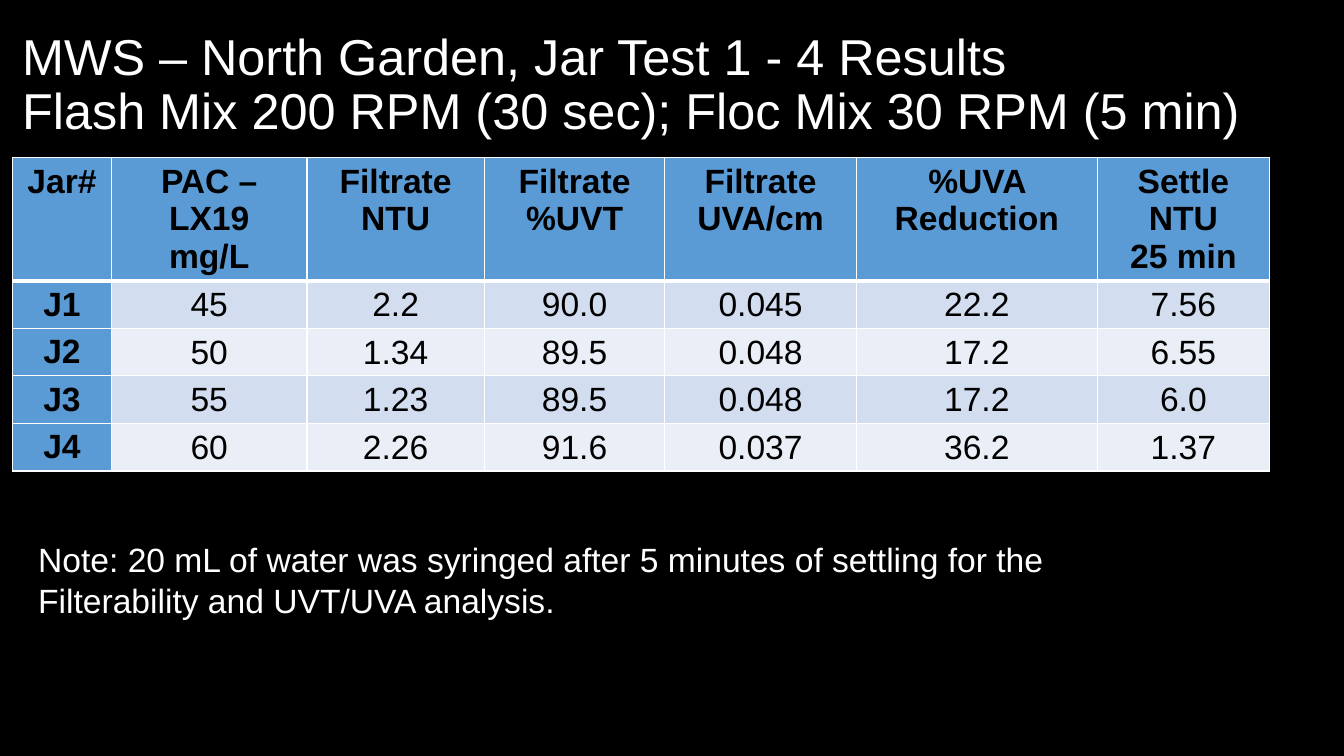
from copy import deepcopy

from lxml import etree
from pptx import Presentation
from pptx.dml.color import RGBColor
from pptx.enum.text import MSO_ANCHOR, MSO_AUTO_SIZE, PP_ALIGN
from pptx.oxml.ns import qn
from pptx.util import Pt

LEFT, CENTER = PP_ALIGN.LEFT, PP_ALIGN.CENTER
TOP, MIDDLE = MSO_ANCHOR.TOP, MSO_ANCHOR.MIDDLE
NO_FIT, GROW = MSO_AUTO_SIZE.NONE, MSO_AUTO_SIZE.SHAPE_TO_FIT_TEXT

COLORS = {
    "background": "000000",
    "light": "FFFFFF",
    "dark": "000000",
    "header": "5B9BD5",
    "odd": "D2DEEF",
    "even": "EAEFF7",
}
FONT = "Arial"
TITLE = ("MWS – North Garden, Jar Test 1 - 4 Results\v"
         "Flash Mix 200 RPM (30 sec); Floc Mix 30 RPM (5 min)")
HEADINGS = ["Jar#", "PAC – LX19\nmg/L", "Filtrate\nNTU", "Filtrate\n%UVT",
            "Filtrate\nUVA/cm", "%UVA Reduction", "Settle\nNTU\n25 min"]
JARS = [
    ["J1", "45", "2.2", "90.0", "0.045", "22.2", "7.56"],
    ["J2", "50", "1.34", "89.5", "0.048", "17.2", "6.55"],
    ["J3", "55", "1.23", "89.5", "0.048", "17.2", "6.0"],
    ["J4", "60", "2.26", "91.6", "0.037", "36.2", "1.37"],
]
NOTE = ("Note: 20 mL of water was syringed after 5 minutes of settling for the\n"
        "Filterability and UVT/UVA analysis.")
COLUMN_WIDTHS = [70.6, 139.7, 126.7, 128.9, 136.8, 172.1, 123.1]
HEADER_HEIGHT, JAR_HEIGHT = 87.8, 33.9


def rgb(name):
    return RGBColor.from_string(COLORS[name])


def write(frame, text, size=24, color="dark", bold=False, align=LEFT, spacing=None):
    """Newlines start paragraphs; vertical tabs break lines."""
    frame.text = text
    for paragraph in frame.paragraphs:
        paragraph.alignment = align
        if spacing:
            paragraph.line_spacing = spacing
        for run in paragraph.runs:
            run.font.name, run.font.size, run.font.bold = FONT, Pt(size), bold
            run.font.color.rgb = rgb(color)
        # Line breaks take the height of the text around them
        for line_break in paragraph._p.findall(qn("a:br")):
            line_break.insert(0, deepcopy(paragraph.runs[0].font._element))


def set_borders(cell, **widths):
    properties = cell._tc.get_or_add_tcPr()
    for index, side in enumerate("LRTB"):
        line = etree.Element(qn(f"a:ln{side}"), w=str(Pt(widths.get(side, 1))))
        fill = etree.SubElement(line, qn("a:solidFill"))
        etree.SubElement(fill, qn("a:srgbClr"), val=COLORS["light"])
        properties.insert(index, line)


def place_title(slide, left, top, width, height):
    title = slide.shapes.title
    title.left, title.top, title.width, title.height = map(Pt, (left, top, width, height))
    frame = title.text_frame
    frame.word_wrap, frame.auto_size, frame.vertical_anchor = True, NO_FIT, MIDDLE
    write(frame, TITLE, size=36, color="light", spacing=0.9)


def place_results(slide, left, top):
    rows = [HEADINGS] + JARS
    height = HEADER_HEIGHT + JAR_HEIGHT * len(JARS)
    results = slide.shapes.add_table(len(rows), len(HEADINGS), Pt(left), Pt(top),
                                     Pt(sum(COLUMN_WIDTHS)), Pt(height)).table
    for column, width in zip(results.columns, COLUMN_WIDTHS):
        column.width = Pt(width)
    for r, values in enumerate(rows):
        results.rows[r].height = Pt(JAR_HEIGHT if r else HEADER_HEIGHT)
        for c, value in enumerate(values):
            cell = results.cell(r, c)
            heading = r == 0 or c == 0
            write(cell.text_frame, value, bold=heading, align=CENTER)
            cell.vertical_anchor = TOP if heading else MIDDLE
            if not heading:
                cell.margin_left = cell.margin_right = cell.margin_top = Pt(0.7)
                cell.margin_bottom = 0
            cell.fill.solid()
            cell.fill.fore_color.rgb = rgb("header" if heading else "odd" if r % 2 else "even")
            # A thick rule parts the headings from the jars
            set_borders(cell, T=3 if r == 1 else 1, B=3 if r == 0 else 1)


def place_note(slide, left, top, width, height):
    note = slide.shapes.add_textbox(Pt(left), Pt(top), Pt(width), Pt(height))
    frame = note.text_frame
    frame.word_wrap, frame.auto_size = False, GROW
    write(frame, NOTE, color="light")


def main():
    deck = Presentation()
    deck.slide_width, deck.slide_height = Pt(960), Pt(540)
    slide = deck.slides.add_slide(deck.slide_layouts[5])
    slide.background.fill.solid()
    slide.background.fill.fore_color.rgb = rgb("background")
    place_title(slide, 8.6, 9.4, 938.2, 104.4)
    place_results(slide, 9, 112.7)
    place_note(slide, 20.2, 381.6, 746.6, 65.5)
    deck.save("out.pptx")


if __name__ == "__main__":
    main()
